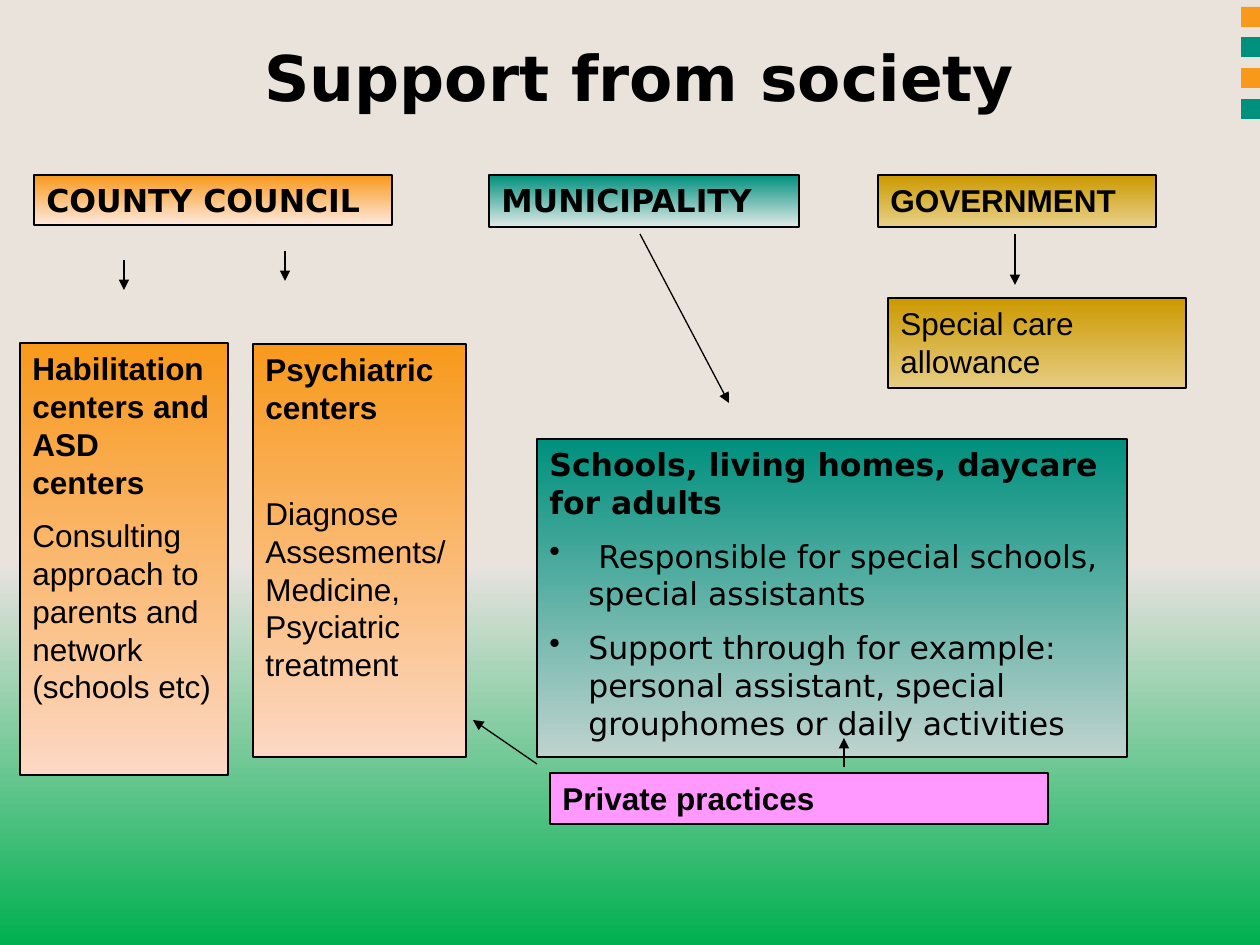
import copy

import pptx
import pptx.dml.color
import pptx.enum.shapes
import pptx.enum.text
import pptx.oxml
import pptx.oxml.ns
import pptx.util

PX = 914400 / 126
ORANGE, TEAL, GOLD, PINK = "F8991C", "00907E", "CC9900", "FF99FF"
SAND, BLACK = "E9E3DC", "000000"
SANS, WIDE = "Arial", "DejaVu Sans"


def emu(*lengths):
    """Turn px lengths into EMU."""
    return [pptx.util.Emu(round(length * PX)) for length in lengths]


def color(value):
    """Turn a hex string into a colour."""
    return pptx.dml.color.RGBColor.from_string(value)


def qn(tag):
    """Expand a prefixed XML tag."""
    return pptx.oxml.ns.qn(tag)


def paint_gradient(fill, holder, stops):
    """Give a fill a top-to-bottom gradient of (position, hex) stops."""
    fill.gradient()
    fill.gradient_angle = 270
    stop_list = next(holder.iter(qn("a:gsLst")))
    for _ in stops[2:]:
        stop_list.append(copy.deepcopy(stop_list[-1]))
    for stop, (position, value) in zip(fill.gradient_stops, stops):
        stop.position = position
        stop.color.rgb = color(value)


def add_text(paragraph, text, font=SANS, size=18, bold=False, before=0, bullet=False):
    """Write formatted text into a paragraph."""
    paragraph.text = text
    if bullet:
        properties = paragraph._p.get_or_add_pPr()
        indent = emu(39)[0]
        properties.set("marL", str(indent))
        properties.set("indent", str(-indent))
        mark = pptx.oxml.parse_xml(f'<a:buChar {pptx.oxml.ns.nsdecls("a")} char="•"/>')
        properties.append(mark)
    paragraph.space_before = pptx.util.Pt(before)
    for run in paragraph.runs:
        run.font.name = font
        run.font.size = pptx.util.Pt(size)
        run.font.bold = bold
        run.font.color.rgb = color(BLACK)


def add_rectangle(slide, box, top, bottom=None, outlined=False):
    """Add a plain or gradient rectangle."""
    kind = pptx.enum.shapes.MSO_SHAPE.RECTANGLE
    shape = slide.shapes.add_shape(kind, *emu(*box))
    shape.shadow.inherit = False
    if bottom:
        paint_gradient(shape.fill, shape.element, [(0, top), (1, bottom)])
    else:
        shape.fill.solid()
        shape.fill.fore_color.rgb = color(top)
    if outlined:
        shape.line.color.rgb = color(BLACK)
        shape.line.width = pptx.util.Pt(0.75)
    else:
        shape.line.fill.background()
    return shape


def add_card(slide, box, top, bottom, *entries):
    """Add an outlined box with one paragraph per (text, format) entry."""
    frame = add_rectangle(slide, box, top, bottom, outlined=True).text_frame
    frame.word_wrap = True
    frame.vertical_anchor = pptx.enum.text.MSO_ANCHOR.TOP
    for index, (text, style) in enumerate(entries):
        paragraph = frame.add_paragraph() if index else frame.paragraphs[0]
        paragraph.alignment = pptx.enum.text.PP_ALIGN.LEFT
        add_text(paragraph, text, **style)


def add_arrow(slide, start_x, start_y, end_x, end_y):
    """Add a thin line with a triangle at its end."""
    kind = pptx.enum.shapes.MSO_CONNECTOR.STRAIGHT
    arrow = slide.shapes.add_connector(kind, *emu(start_x, start_y, end_x, end_y))
    arrow.line.color.rgb = color(BLACK)
    arrow.line.width = pptx.util.Pt(0.75)
    namespace = pptx.oxml.ns.nsdecls("a")
    line = arrow.line._get_or_add_ln()
    line.append(pptx.oxml.parse_xml(f'<a:tailEnd {namespace} type="triangle"/>'))
    arrow.element.spPr.append(pptx.oxml.parse_xml(f"<a:effectLst {namespace}/>"))


def add_banner(slide, left, top, width, height):
    """Place the top band, its corner stripes and the title."""
    add_rectangle(slide, (left, top, width, height), SAND)
    for index, value in enumerate([ORANGE, TEAL] * 2):
        stripe_top = top + 7 + index * 92 // 3
        add_rectangle(slide, (left + width - 19, stripe_top, 19, 20), value)
    title = slide.shapes.title
    title.left, title.top, title.width, title.height = emu(left + 252, top + 32, 775, 90)
    frame = title.text_frame
    frame.word_wrap = False
    frame.auto_size = pptx.enum.text.MSO_AUTO_SIZE.NONE
    frame.vertical_anchor = pptx.enum.text.MSO_ANCHOR.TOP
    frame.paragraphs[0].alignment = pptx.enum.text.PP_ALIGN.CENTER
    add_text(frame.paragraphs[0], "Support from society", font=WIDE, size=36, bold=True)
    slide.shapes._spTree.append(title.element)


def add_council(slide, left, top, width, height):
    """Place the county council with its two kinds of centers."""
    add_card(slide, (left + 14, top, 358, 50), ORANGE, "FDE9DE",
             ("COUNTY COUNCIL", dict(font=WIDE, bold=True)))
    add_arrow(slide, left + 104, top + 85, left + 104, top + 115)
    add_arrow(slide, left + 265, top + 76, left + 265, top + 106)
    add_card(slide, (left, top + 168, 208, height - 168), ORANGE, "FCD8C4",
             ("Habilitation centers and ASD centers", dict(bold=True)),
             ("Consulting approach to parents and network\v(schools etc)", dict(before=9)))
    add_card(slide, (left + width - 213, top + 169, 213, 413), ORANGE, "FCD8C4",
             ("Psychiatric centers", dict(bold=True)),
             ("Diagnose Assesments/Medicine, Psyciatric treatment", dict(before=39)))


def add_municipality(slide, left, top, width, height):
    """Place the municipality and the services it runs."""
    item = dict(font=WIDE, before=9, bullet=True)
    add_card(slide, (left, top, 310, 52), TEAL, "E2EAE8",
             ("MUNICIPALITY", dict(font=WIDE, bold=True)))
    add_arrow(slide, left + 151, top + 59, left + 240, top + 228)
    add_card(slide, (left + 48, top + 264, width - 48, height - 264), TEAL, "BFD3CE",
             ("Schools, living homes, daycare for adults", dict(font=WIDE, bold=True)),
             (" Responsible for special schools, special assistants", item),
             ("Support through for example: personal assistant, special "
              "grouphomes or daily activities", item))


def add_government(slide, left, top, width, height):
    """Place the government and its allowance."""
    add_card(slide, (left, top, 278, 52), GOLD, "E8D18B",
             ("GOVERNMENT", dict(bold=True)))
    add_arrow(slide, left + 137, top + 59, left + 137, top + 110)
    add_card(slide, (left + 10, top + 123, width - 10, height - 123), GOLD, "E6CD83",
             ("Special care allowance", {}))


def add_private(slide, left, top, width, height):
    """Place the private practices and their links upward."""
    add_card(slide, (left, top, width, height), PINK, None,
             ("Private practices", dict(bold=True)))
    add_arrow(slide, left - 13, top - 9, left - 77, top - 53)
    add_arrow(slide, left + 294, top - 6, left + 294, top - 35)


def main():
    """Build the slide and save it."""
    presentation = pptx.Presentation()
    presentation.slide_width, presentation.slide_height = emu(1260, 945)
    slide = presentation.slides.add_slide(presentation.slide_layouts[5])
    paint_gradient(slide.background.fill, slide.element,
                   [(0, SAND), (0.6, "E6E2DE"), (1, "00B050")])
    add_banner(slide, 0, 0, 1260, 125)
    add_council(slide, 20, 175, 446, 600)
    add_municipality(slide, 489, 175, 638, 582)
    add_government(slide, 878, 175, 308, 213)
    add_private(slide, 550, 773, 498, 51)
    presentation.save("out.pptx")


if __name__ == "__main__":
    main()
